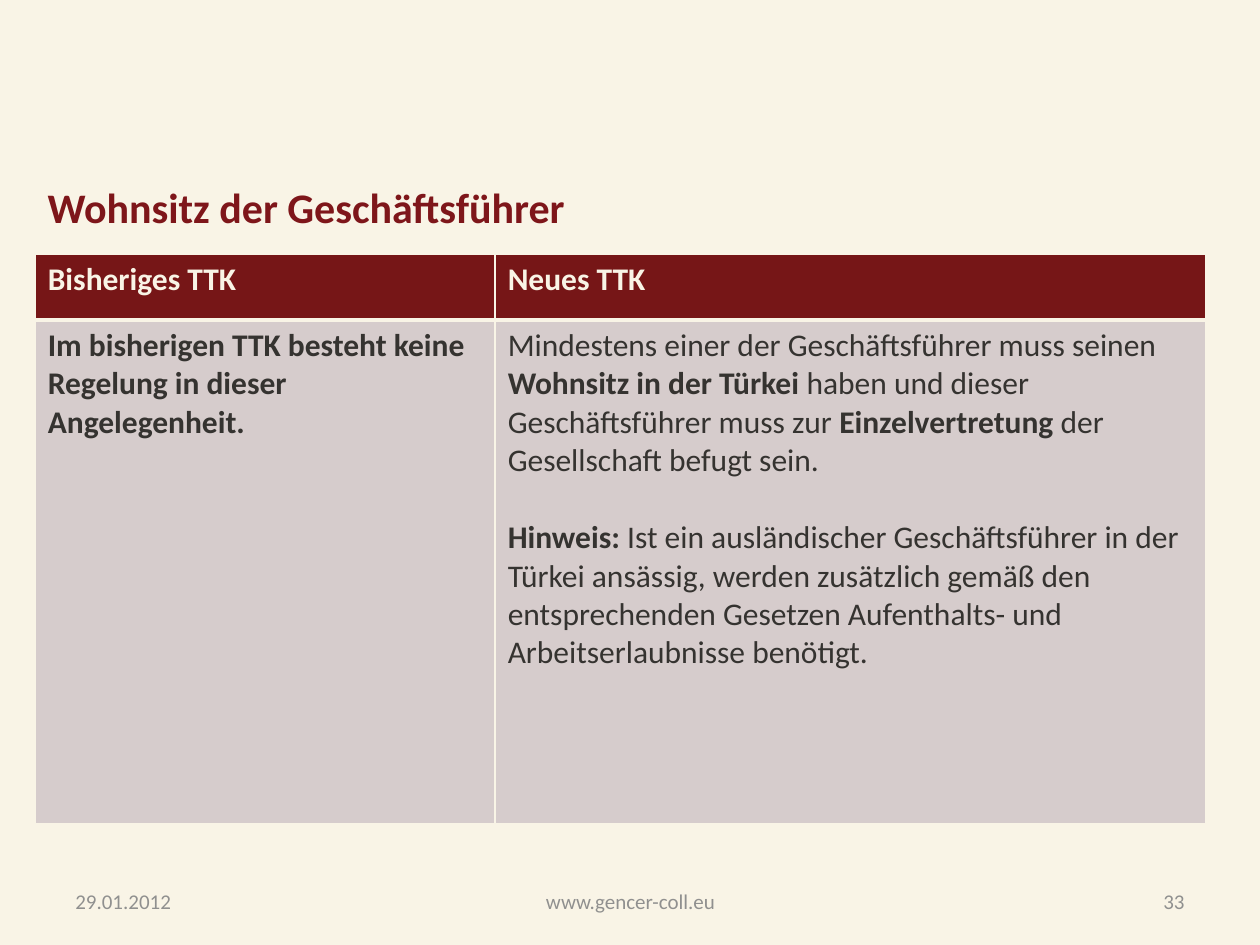
from dataclasses import dataclass

from lxml import etree
from pptx import Presentation
from pptx import util as u
from pptx.dml.color import RGBColor
from pptx.enum import text
from pptx.oxml import ns


@dataclass(frozen=True)
class Theme:
    font: str = "Calibri"
    paper: str = "F9F4E6"
    title: str = "7E161A"
    header: str = "761617"
    body: str = "D6CCCC"
    ink: str = "353330"
    muted: str = "90908F"
    title_size: int = 24
    table_size: int = 18
    footer_size: int = 12
    paragraph_gap: int = 22


@dataclass(frozen=True)
class Span:
    text: str
    bold: bool = False


@dataclass(frozen=True)
class Label:
    text: str
    left: float
    top: float
    width: float
    height: float
    size: int
    color: str
    bold: bool = False
    align: text.PP_ALIGN = text.PP_ALIGN.LEFT
    anchor: text.MSO_ANCHOR = text.MSO_ANCHOR.MIDDLE


@dataclass(frozen=True)
class RowStyle:
    height: float
    fill: str
    color: str
    bottom_border: int


THEME = Theme()

# Title and footer
FOOTER = dict(top=6.95, height=0.4, size=THEME.footer_size, color=THEME.muted)
LABELS = [
    Label("29.01.2012", left=0.5, width=2.33, **FOOTER),
    Label("www.gencer-coll.eu", left=3.42, width=3.17,
          align=text.PP_ALIGN.CENTER, **FOOTER),
    Label("33", left=7.17, width=2.33, align=text.PP_ALIGN.RIGHT, **FOOTER),
    Label("Wohnsitz der Geschäftsführer", 0.28, 1.39, 7.87, 0.47,
          THEME.title_size, THEME.title, bold=True, anchor=text.MSO_ANCHOR.TOP),
]

# Table: rows of cells, each cell a list of paragraphs made of spans
COLUMN_WIDTHS = [3.65, 5.64]
ROW_STYLES = [
    RowStyle(0.52, THEME.header, THEME.paper, 3),
    RowStyle(4.0, THEME.body, THEME.ink, 1),
]
ROWS = [
    [
        [[Span("Bisheriges TTK", True)]],
        [[Span("Neues TTK", True)]],
    ],
    [
        [[Span("Im bisherigen TTK besteht keine Regelung in dieser "
               "Angelegenheit.", True)]],
        [
            [
                Span("Mindestens einer der Geschäftsführer muss seinen "),
                Span("Wohnsitz in der Türkei ", True),
                Span("haben und dieser Geschäftsführer muss zur "),
                Span("Einzelvertretung", True),
                Span(" der Gesellschaft befugt sein."),
            ],
            [
                Span("Hinweis: ", True),
                Span("Ist ein ausländischer Geschäftsführer in der Türkei "
                     "ansässig, werden zusätzlich gemäß den entsprechenden "
                     "Gesetzen Aufenthalts- und Arbeitserlaubnisse benötigt."),
            ],
        ],
    ],
]


def add_span(para, span: Span, size: int, color: str) -> None:
    run = para.add_run()
    run.text = span.text
    formats = {"name": THEME.font, "size": u.Pt(size), "bold": span.bold}
    for name, value in formats.items():
        setattr(run.font, name, value)
    run.font.color.rgb = RGBColor.from_string(color)


def add_label(page, label: Label) -> None:
    box = page.shapes.add_textbox(u.Inches(label.left), u.Inches(label.top),
                                  u.Inches(label.width), u.Inches(label.height))
    frame = box.text_frame
    for name, value in {"word_wrap": True, "vertical_anchor": label.anchor}.items():
        setattr(frame, name, value)
    para = frame.paragraphs[0]
    para.alignment = label.align
    add_span(para, Span(label.text, label.bold), label.size, label.color)


def set_borders(cell, bottom: int) -> None:
    properties = cell._tc.get_or_add_tcPr()
    widths = {"lnL": 1, "lnR": 1, "lnT": 1, "lnB": bottom}
    for position, (tag, width) in enumerate(widths.items()):
        line = etree.Element(ns.qn(f"a:{tag}"), w=str(u.Pt(width)))
        fill = etree.SubElement(line, ns.qn("a:solidFill"))
        etree.SubElement(fill, ns.qn("a:srgbClr"), val=THEME.paper)
        properties.insert(position, line)


def fill_cell(cell, paragraphs: list[list[Span]], style: RowStyle) -> None:
    cell.fill.solid()
    cell.fill.fore_color.rgb = RGBColor.from_string(style.fill)
    set_borders(cell, style.bottom_border)
    frame = cell.text_frame
    for index, spans in enumerate(paragraphs):
        para = frame.add_paragraph() if index else frame.paragraphs[0]
        if index:
            para.space_before = u.Pt(THEME.paragraph_gap)
        for span in spans:
            add_span(para, span, THEME.table_size, style.color)


def add_comparison(page) -> None:
    height = sum(style.height for style in ROW_STYLES)
    table = page.shapes.add_table(
        len(ROWS), len(COLUMN_WIDTHS), u.Inches(0.28), u.Inches(2.02),
        u.Inches(sum(COLUMN_WIDTHS)), u.Inches(height)).table
    for column, width in zip(table.columns, COLUMN_WIDTHS):
        column.width = u.Inches(width)
    for row, style, contents in zip(table.rows, ROW_STYLES, ROWS):
        row.height = u.Inches(style.height)
        for cell, paragraphs in zip(row.cells, contents):
            fill_cell(cell, paragraphs, style)


def main() -> None:
    deck = Presentation()
    deck.slide_width, deck.slide_height = u.Inches(10), u.Inches(7.5)
    page = deck.slides.add_slide(deck.slide_layouts[6])
    page.background.fill.solid()
    page.background.fill.fore_color.rgb = RGBColor.from_string(THEME.paper)
    for label in LABELS:
        add_label(page, label)
    add_comparison(page)
    deck.save("out.pptx")


if __name__ == "__main__":
    main()
